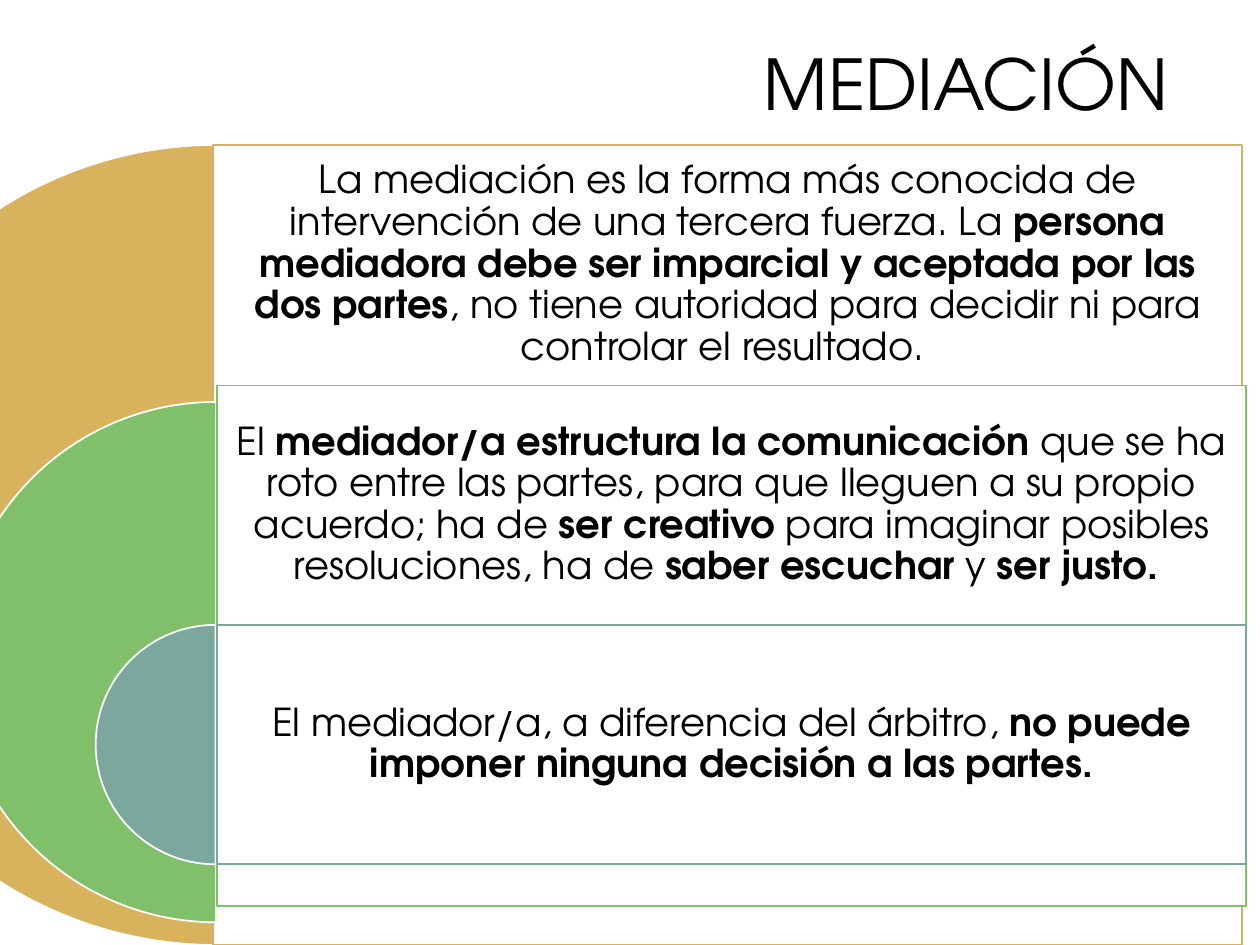
from lxml.etree import SubElement
from pptx import Presentation
from pptx.dml.color import RGBColor
from pptx.enum.shapes import MSO_SHAPE
from pptx.enum.text import MSO_ANCHOR, PP_ALIGN
from pptx.oxml.ns import qn
from pptx.util import Inches, Pt

FONT = "TeX Gyre Adventor"
ROW_HEIGHT = 1.9
PANEL_WIDTH = 8.17

# Runs alternate between regular and bold.
SECTIONS = [
    ("D8B25C", (1.69, 1.15), (-1.46, 1.15, 6.35), 6.35, [
        "La mediación es la forma más conocida de intervención de una tercera fuerza. La ",
        "persona mediadora debe ser imparcial y aceptada por las dos partes",
        ", no tiene autoridad para decidir ni para controlar el resultado. "]),
    ("81C06B", (1.72, 3.06), (-0.35, 3.19, 4.13), 4.13, [
        "El ", "mediador/a estructura la comunicación",
        " que se ha roto entre las partes, para que lleguen a su propio acuerdo; ha de ",
        "ser creativo ", "para imaginar posibles resoluciones, ha de ",
        "saber escuchar ", "y ", "ser justo. "]),
    ("7BA79D", (1.72, 4.96), (0.76, 4.96, 1.9), 1.9, [
        "El mediador/a, a diferencia del árbitro, ",
        "no puede imponer ninguna decisión a las partes."]),
]


def rgb(value):
    """Turn a hex string into a colour."""
    return RGBColor.from_string(value)


def style_paragraph(p, size, align):
    """Apply the slide's common text format."""
    p.alignment = align
    p.line_spacing = 0.9
    p.font.size = Pt(size)
    p.font.name = FONT
    p.font.color.rgb = rgb("000000")


def add_title(slide, left, top, width, height):
    """Place the title in its placeholder."""
    title = slide.shapes.title
    title.left, title.top = Inches(left), Inches(top)
    title.width, title.height = Inches(width), Inches(height)
    tf = title.text_frame
    tf.text = "MEDIACIÓN"
    tf.vertical_anchor = MSO_ANCHOR.MIDDLE
    style_paragraph(tf.paragraphs[0], 40, PP_ALIGN.RIGHT)


def add_filled(shapes, kind, box, fill, line):
    """Add a flat shape with a fill and a thin outline."""
    sp = shapes.add_shape(kind, *map(Inches, box))
    sp.shadow.inherit = False
    sp.fill.solid()
    sp.fill.fore_color.rgb = rgb(fill)
    sp.line.color.rgb = rgb(line)
    sp.line.width = Pt(1)
    return sp


def add_half_disc(shapes, left, top, diameter, color):
    """Draw the left half of a disc."""
    pie = add_filled(shapes, MSO_SHAPE.PIE, (left, top, diameter, diameter), color, "FFFFFF")
    pie.adjustments[0] = 54
    pie.adjustments[1] = 162


def add_panel(shapes, left, top, width, height, color):
    """Draw a slightly transparent white panel with a coloured outline."""
    panel = add_filled(shapes, MSO_SHAPE.RECTANGLE, (left, top, width, height), "FFFFFF", color)
    fill = panel.fill._xPr.find(qn("a:solidFill"))
    SubElement(fill[0], qn("a:alpha"), val="90000")


def add_text(shapes, left, top, width, height, parts):
    """Write alternating regular and bold runs, centred in the box."""
    tf = shapes.add_textbox(*map(Inches, (left, top, width, height))).text_frame
    tf.word_wrap = True
    tf.vertical_anchor = MSO_ANCHOR.MIDDLE
    tf.margin_left = tf.margin_right = tf.margin_top = tf.margin_bottom = Inches(0.09)
    p = tf.paragraphs[0]
    style_paragraph(p, 22, PP_ALIGN.CENTER)
    for i, part in enumerate(parts):
        r = p.add_run()
        r.text = part
        r.font.bold = i % 2 == 1


def add_section(shapes, color, corner, disc, height, parts):
    """Place one half disc with its panel and text."""
    add_half_disc(shapes, *disc, color)
    add_panel(shapes, *corner, PANEL_WIDTH, height, color)
    add_text(shapes, *corner, PANEL_WIDTH, ROW_HEIGHT, parts)


def main():
    """Build and save the slide."""
    prs = Presentation()
    prs.slide_width, prs.slide_height = Inches(10), Inches(7.5)
    slide = prs.slides.add_slide(prs.slide_layouts[5])
    add_title(slide, 2.4, 0.17, 6.97, 1.06)
    diagram = slide.shapes.add_group_shape()
    for section in SECTIONS:
        add_section(diagram.shapes, *section)
    prs.save("out.pptx")


if __name__ == "__main__":
    main()
